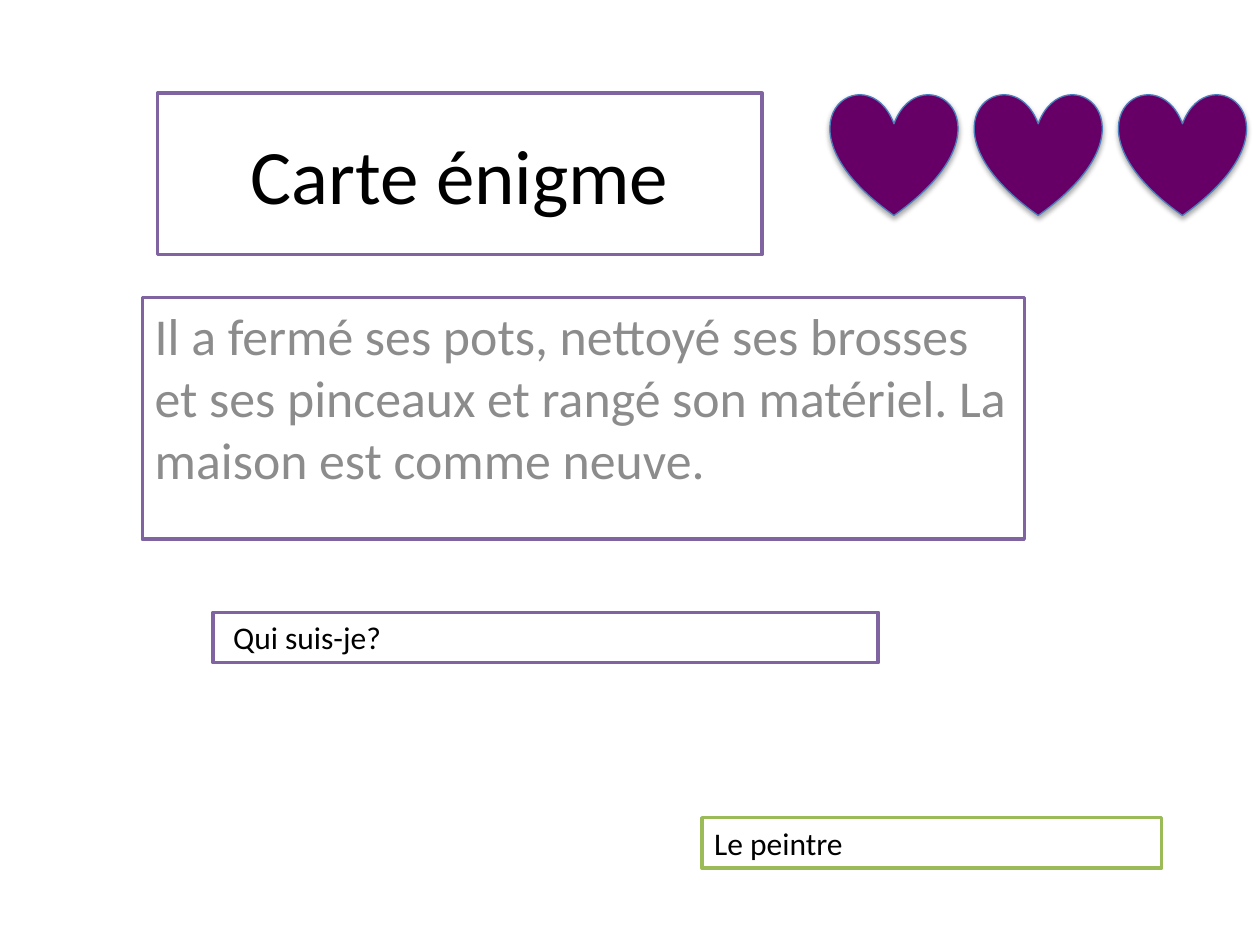
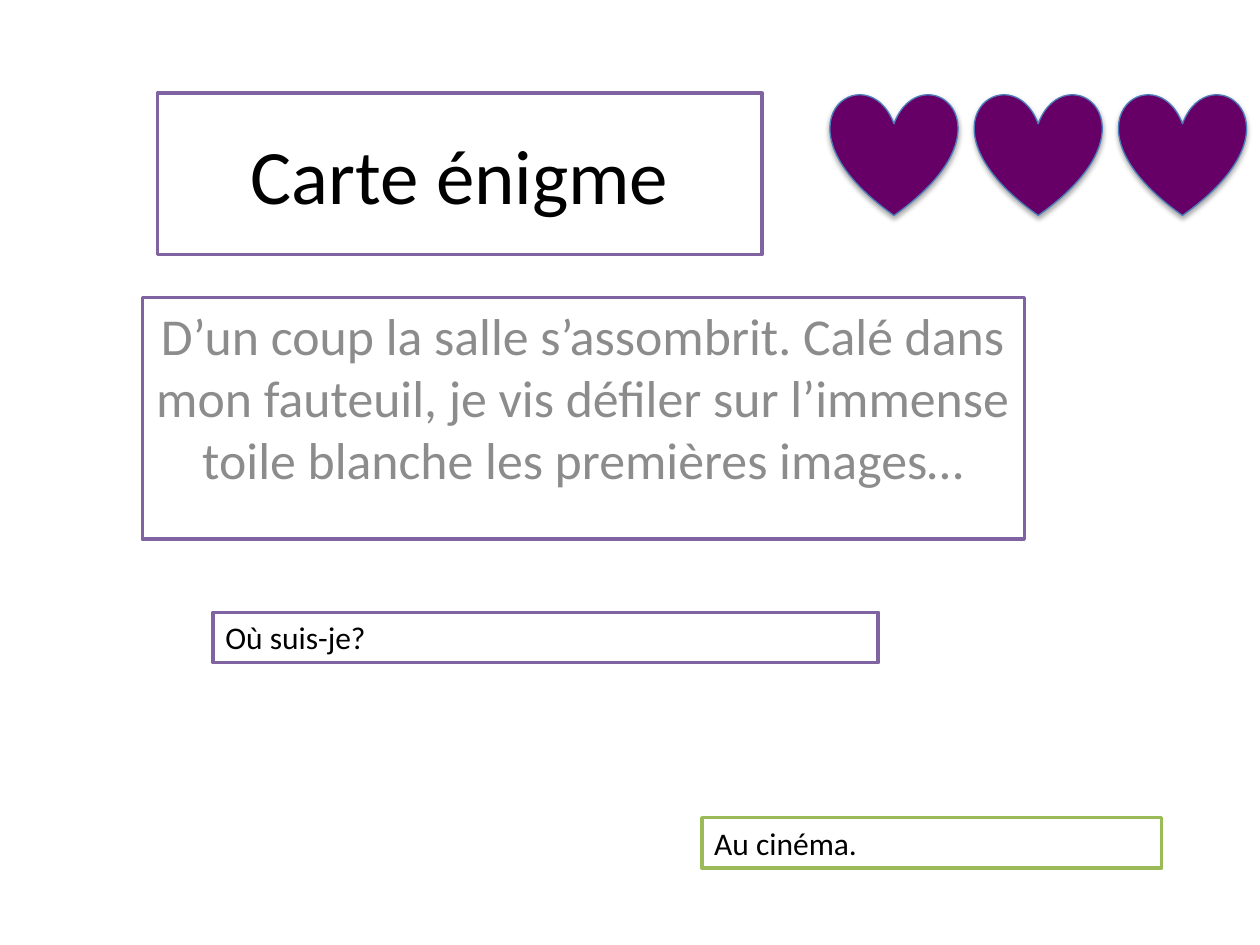
from dataclasses import dataclass

from lxml.etree import SubElement
from pptx import Presentation
from pptx.dml.color import RGBColor
from pptx.enum.shapes import MSO_SHAPE
from pptx.enum.text import MSO_ANCHOR, PP_ALIGN
from pptx.oxml.ns import qn
from pptx.util import Inches, Pt

FONT = "Calibri"
WHITE, BLACK, GREY = "FFFFFF", "000000", "8C8C8C"
PURPLE, GREEN = "8064A2", "9BBB59"
HEART_FILL, HEART_LINE = "660066", "4B7EBC"
HEART_COUNT, HEART_LEFT, HEART_STEP = 3, 6.59, 1.145


@dataclass(frozen=True)
class Frame:
    left: float
    top: float
    width: float
    height: float
    border: str = PURPLE
    size: float = 18
    color: str = BLACK
    anchor: MSO_ANCHOR = MSO_ANCHOR.TOP


@dataclass(frozen=True)
class Card:
    riddle: str
    question: str
    answer: str
    riddle_align: PP_ALIGN = PP_ALIGN.LEFT
    question_inset: float = 0.1


TITLE = Frame(1.25, 0.74, 4.8, 1.28, size=44, anchor=MSO_ANCHOR.MIDDLE)
RIDDLE = Frame(1.13, 2.36, 7, 1.92, size=29.6, color=GREY)
QUESTION = Frame(1.69, 4.86, 5.28, 0.4)
ANSWER = Frame(5.57, 6.49, 3.65, 0.4, border=GREEN)

CARDS = [
    Card("Il a fermé ses pots, nettoyé ses brosses et ses pinceaux et rangé "
         "son matériel. La maison est comme neuve.",
         "Qui suis-je?", "Le peintre", question_inset=0.16),
    Card("D’un coup la salle s’assombrit. Calé dans mon fauteuil, je vis "
         "défiler sur l’immense toile blanche les premières images…",
         "Où suis-je?", "Au cinéma.", riddle_align=PP_ALIGN.CENTER),
]


def rgb(color: str) -> RGBColor:
    return RGBColor.from_string(color)


def add_filled(slide, kind: MSO_SHAPE, left: float, top: float, width: float,
               height: float, fill: str, line: str, weight: float):
    sp = slide.shapes.add_shape(kind, Inches(left), Inches(top),
                                Inches(width), Inches(height))
    sp.shadow.inherit = False
    sp.fill.solid()
    sp.fill.fore_color.rgb = rgb(fill)
    sp.line.color.rgb = rgb(line)
    sp.line.width = Pt(weight)
    return sp


def add_frame(slide, frame: Frame, text: str,
              align: PP_ALIGN = PP_ALIGN.LEFT, inset: float = 0.1) -> None:
    sp = add_filled(slide, MSO_SHAPE.RECTANGLE, frame.left, frame.top,
                    frame.width, frame.height, WHITE, frame.border, 2)
    tf = sp.text_frame
    tf.word_wrap = True
    tf.vertical_anchor = frame.anchor
    tf.margin_left = Inches(inset)
    tf.text = text
    p = tf.paragraphs[0]
    p.alignment = align
    font = p.runs[0].font
    font.name, font.size = FONT, Pt(frame.size)
    font.color.rgb = rgb(frame.color)


def add_heart(slide, left: float) -> None:
    sp = add_filled(slide, MSO_SHAPE.HEART, left, 0.74, 1.01, 0.97,
                    HEART_FILL, HEART_LINE, 0.75)
    # Soft shadow straight below the heart
    effects = sp._element.spPr.find(qn("a:effectLst"))
    shadow = SubElement(effects, qn("a:outerShdw"), blurRad=str(Pt(3.1)),
                        dist=str(Pt(1.8)), dir="5400000", rotWithShape="0")
    color = SubElement(shadow, qn("a:srgbClr"), val=BLACK)
    SubElement(color, qn("a:alpha"), val="35000")


def add_card(prs, card: Card) -> None:
    slide = prs.slides.add_slide(prs.slide_layouts[6])
    add_frame(slide, TITLE, "Carte énigme", PP_ALIGN.CENTER)
    add_frame(slide, RIDDLE, card.riddle, card.riddle_align)
    add_frame(slide, QUESTION, card.question, inset=card.question_inset)
    add_frame(slide, ANSWER, card.answer)
    # Difficulty rating
    for i in range(HEART_COUNT):
        add_heart(slide, HEART_LEFT + i * HEART_STEP)


def main() -> None:
    prs = Presentation()
    prs.slide_width, prs.slide_height = Inches(10), Inches(7.5)
    for card in CARDS:
        add_card(prs, card)
    prs.save("out.pptx")


if __name__ == "__main__":
    main()
